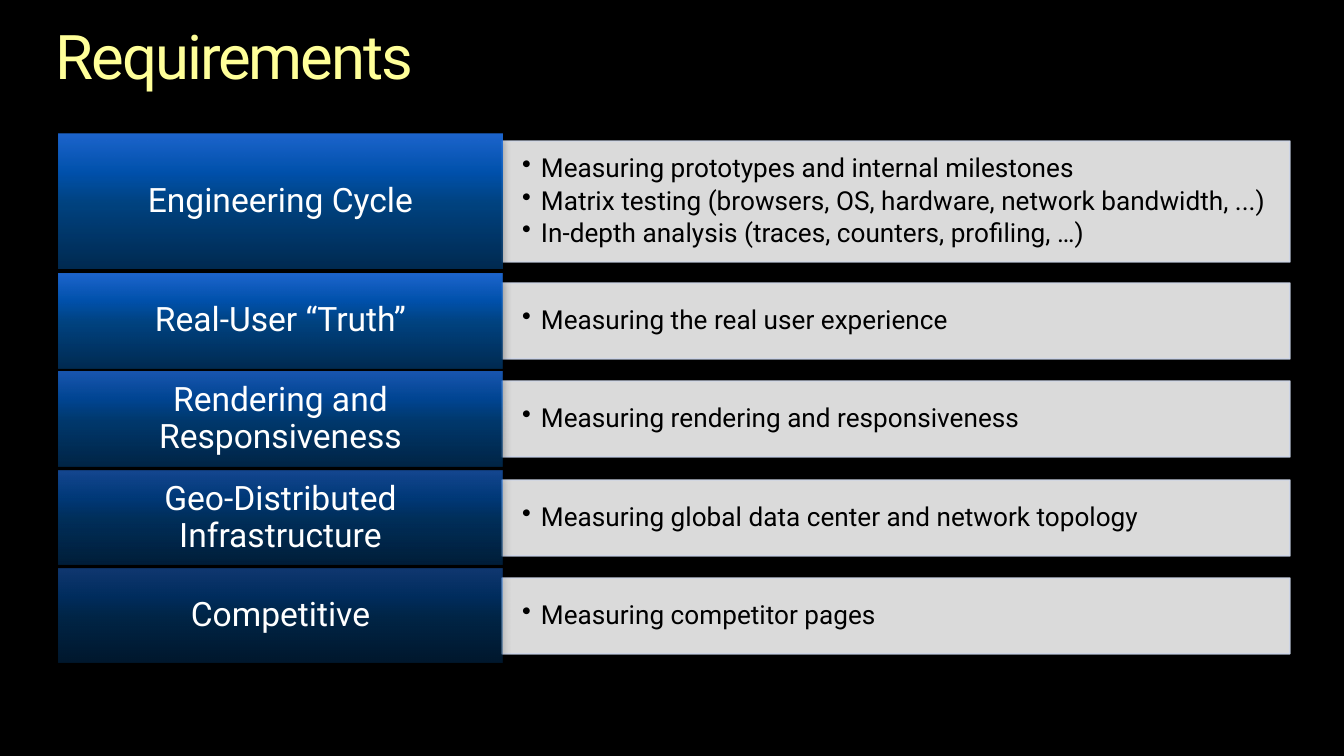
from dataclasses import dataclass

from lxml.etree import SubElement
from pptx import Presentation
from pptx.dml.color import RGBColor
from pptx.enum.shapes import MSO_SHAPE
from pptx.enum.text import MSO_ANCHOR, MSO_AUTO_SIZE, PP_ALIGN
from pptx.oxml.ns import qn
from pptx.util import Pt

PX = 6804  # EMU per px, for a slide of 1344 x 756 px


@dataclass(frozen=True)
class Theme:
    font: str = "Roboto"
    background: str = "000000"
    title_stops: tuple = ((0, "FFFFB9"), (36, "FFFF99"), (86, "F6AE1E"))
    label_stops: tuple = ((0, "002F59"), (50, "004B90"), (70, "0059BC"), (100, "2170E3"))
    label_text: str = "FFFFFF"
    panel: str = "F2F2F2"
    panel_line: str = "CCD4E8"
    panel_text: str = "000000"
    title_size: int = 33
    label_size: int = 18
    panel_size: int = 14


theme = Theme()


def set_gradient(fill, element, stops, angle):
    """Fill with stops of (percent, colour); angle is in clockwise degrees."""
    fill.gradient()
    grad = next(element.iter(qn("a:gradFill")))
    stop_list = grad.find(qn("a:gsLst"))
    stop_list.clear()
    for percent, colour in stops:
        stop = SubElement(stop_list, qn("a:gs"), pos=str(percent * 1000))
        SubElement(stop, qn("a:srgbClr"), val=colour)
    grad.find(qn("a:lin")).set("ang", str(angle * 60000))


def finish_box(sp, lines, size, colour, margins, space_after, alpha, shadow):
    """Add text, transparency and a drop shadow of (alpha, blur, distance)."""
    for clr in sp._element.spPr.iter(qn("a:srgbClr")):
        SubElement(clr, qn("a:alpha"), val=str(alpha * 1000))

    shadow_alpha, blur, distance = shadow
    sp.shadow.inherit = False
    effects = sp._element.spPr.find(qn("a:effectLst"))
    outer = SubElement(effects, qn("a:outerShdw"), blurRad=str(Pt(blur)),
                       dist=str(Pt(distance)), dir="5400000", rotWithShape="0")
    clr = SubElement(outer, qn("a:srgbClr"), val="000000")
    SubElement(clr, qn("a:alpha"), val=str(shadow_alpha * 1000))

    tf = sp.text_frame
    tf.text = "\n".join(lines)
    tf.word_wrap = True
    tf.vertical_anchor = MSO_ANCHOR.MIDDLE
    tf.margin_left = tf.margin_right = margins[0] * PX
    tf.margin_top = tf.margin_bottom = margins[1] * PX
    for p in tf.paragraphs:
        p.line_spacing = 0.9
        p.space_after = Pt(0)
        after = p._p.pPr.find(qn("a:spcAft"))
        after.clear()
        SubElement(after, qn("a:spcPct"), val=str(space_after * 1000))
        font = p.runs[0].font
        font.name = theme.font
        font.size = Pt(size)
        font.color.rgb = RGBColor.from_string(colour)


prs = Presentation()
prs.slide_width, prs.slide_height = 1344 * PX, 756 * PX
s = prs.slides.add_slide(prs.slide_layouts[5])
s.background.fill.solid()
s.background.fill.fore_color.rgb = RGBColor.from_string(theme.background)

# Title
title = s.shapes.title
title.left, title.top, title.width, title.height = 56 * PX, 26 * PX, 1231 * PX, 67 * PX
tf = title.text_frame
tf.text = "Requirements"
tf.auto_size = MSO_AUTO_SIZE.SHAPE_TO_FIT_TEXT
tf.vertical_anchor = MSO_ANCHOR.TOP
tf.margin_left = tf.margin_right = tf.margin_top = tf.margin_bottom = 0
p = tf.paragraphs[0]
p.alignment = PP_ALIGN.LEFT
p.line_spacing = 0.9
r = p.runs[0]
r.font.name = theme.font
r.font.size = Pt(theme.title_size)
r._r.get_or_add_rPr().set("spc", "-110")
set_gradient(r.font.fill, r._r, theme.title_stops, 90)

# Rows: label, label opacity in percent, bullets
rows = [
    ("Engineering Cycle", 90, [
        "Measuring prototypes and internal milestones",
        "Matrix testing (browsers, OS, hardware, network bandwidth, ...)",
        "In-depth analysis (traces, counters, profiling, …)",
    ]),
    ("Real-User “Truth”", 90, ["Measuring the real user experience"]),
    ("Rendering and Responsiveness", 77, ["Measuring rendering and responsiveness"]),
    ("Geo-Distributed Infrastructure", 63,
     ["Measuring global data center and network topology"]),
    ("Competitive", 50, ["Measuring competitor pages"]),
]
LEFT, LABEL_W, PANEL_W = 59, 443, 788

for i, (label, opacity, bullets) in enumerate(rows):
    # The first row is taller; the others repeat every 98.5 px
    if i == 0:
        top, height, inset = 134, 135, 7
    else:
        top, height, inset = 274 + (i - 1) * 197 // 2, 94, 9

    panel = s.shapes.add_shape(
        MSO_SHAPE.RECTANGLE, (LEFT + LABEL_W) * PX, (top + inset) * PX,
        PANEL_W * PX, (height - 2 * inset) * PX)
    panel.fill.solid()
    panel.fill.fore_color.rgb = RGBColor.from_string(theme.panel)
    panel.line.color.rgb = RGBColor.from_string(theme.panel_line)
    panel.line.width = Pt(0.75)
    finish_box(panel, bullets, theme.panel_size, theme.panel_text,
               (8, 4), 15, 90, (35, 4, 3))
    for p in panel.text_frame.paragraphs:
        p.level = 1
        p.alignment = PP_ALIGN.LEFT
        pPr = p._p.get_or_add_pPr()
        pPr.set("marL", str(31 * PX))
        pPr.set("indent", str(-19 * PX))
        SubElement(pPr, qn("a:buChar"), char="•")

    box = s.shapes.add_shape(
        MSO_SHAPE.RECTANGLE, LEFT * PX, top * PX, LABEL_W * PX, height * PX)
    set_gradient(box.fill, box._element.spPr, theme.label_stops, 270)
    box.line.fill.background()
    finish_box(box, [label], theme.label_size, theme.label_text,
               (10, 5), 35, opacity, (45, 5, 3))
    box.text_frame.paragraphs[0].alignment = PP_ALIGN.CENTER

prs.save("out.pptx")
